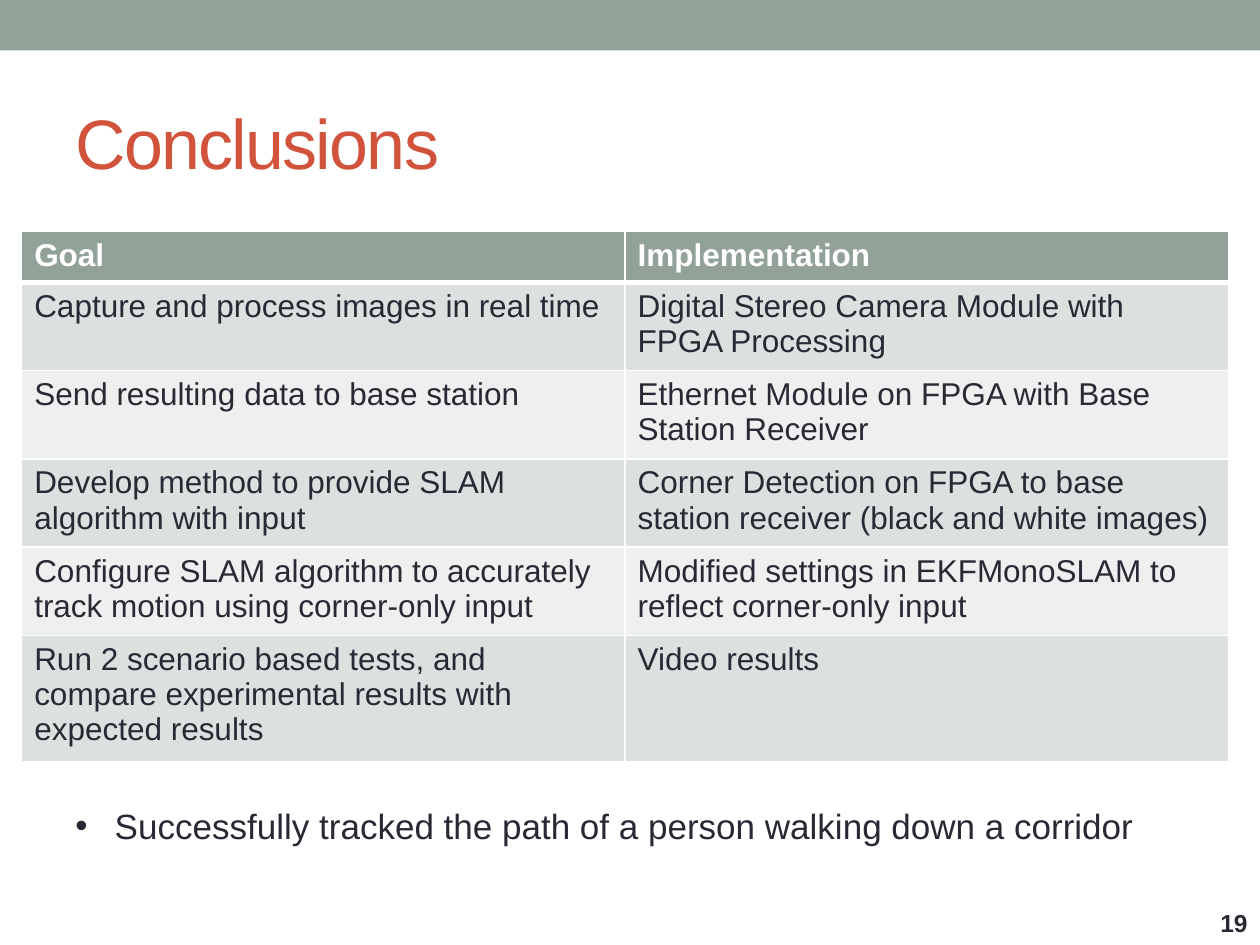
from dataclasses import dataclass

from lxml.etree import SubElement
from pptx import Presentation
from pptx.dml.color import RGBColor as RGB
from pptx.enum.shapes import MSO_SHAPE as SHAPE
from pptx.enum.text import MSO_ANCHOR as ANCHOR, MSO_AUTO_SIZE as FIT, PP_ALIGN as ALIGN
from pptx.oxml import parse_xml
from pptx.oxml.ns import nsdecls, qn
from pptx.util import Pt


@dataclass(frozen=True)
class Theme:
    font: str = "Arial"
    sage: str = "93A299"
    accent: str = "D2533C"
    ink: str = "292934"
    white: str = "FFFFFF"
    bands: tuple = ("DCE0DE", "EEF0EF")
    title: int = 40
    bullet: int = 20
    cell: int = 18
    number: int = 14


T = Theme()
ROWS = [
    ("Goal", "Implementation"),
    ("Capture and process images in real time",
     "Digital Stereo Camera Module with FPGA Processing"),
    ("Send resulting data to base station",
     "Ethernet Module on FPGA with Base Station Receiver"),
    ("Develop method to provide SLAM algorithm with input",
     "Corner Detection on FPGA to base station receiver (black and white images)"),
    ("Configure SLAM algorithm to accurately track motion using corner-only input",
     "Modified settings in EKFMonoSLAM to reflect corner-only input"),
    ("Run 2 scenario based tests, and compare experimental results with expected results",
     "Video results"),
]


def write(p, text, size, color, bold=False):
    r = p.add_run()
    r.text = text
    for name, value in dict(name=T.font, size=Pt(size), bold=bold).items():
        setattr(r.font, name, value)
    r.font.color.rgb = RGB.from_string(color)
    return r


def text_frame(s, box, **fmt):
    tf = s.shapes.add_textbox(*map(Pt, box)).text_frame
    for name, value in {"word_wrap": True, **fmt}.items():
        setattr(tf, name, value)
    return tf


def add_band(s, box):
    sp = s.shapes.add_shape(SHAPE.RECTANGLE, *map(Pt, box))
    sp.shadow.inherit = False
    sp.fill.solid()
    sp.fill.fore_color.rgb = RGB.from_string(T.sage)
    sp.line.fill.background()


def add_title(s, box, text):
    tf = text_frame(s, box, vertical_anchor=ANCHOR.MIDDLE)
    r = write(tf.paragraphs[0], text, T.title, T.accent)
    r._r.get_or_add_rPr().set("spc", "-100")


def set_borders(cell, bottom):
    tcPr = cell._tc.get_or_add_tcPr()
    widths = dict(lnL=1, lnR=1, lnT=1, lnB=bottom)
    for i, (tag, width) in enumerate(widths.items()):
        tcPr.insert(i, parse_xml(
            f'<a:{tag} {nsdecls("a")} w="{Pt(width)}"><a:solidFill>'
            f'<a:srgbClr val="{T.white}"/></a:solidFill></a:{tag}>'))


def add_goal_table(s, box, rows):
    table = s.shapes.add_table(len(rows), len(rows[0]), *map(Pt, box)).table
    table.horz_banding = False
    for i, row in enumerate(rows):
        header = i == 0
        fill = T.sage if header else T.bands[(i - 1) % 2]
        for j, text in enumerate(row):
            cell = table.cell(i, j)
            cell.fill.solid()
            cell.fill.fore_color.rgb = RGB.from_string(fill)
            set_borders(cell, 3 if header else 1)
            write(cell.text_frame.paragraphs[0], text, T.cell,
                  T.white if header else T.ink, header)


def add_bullet(s, box, text, indent):
    tf = text_frame(s, box, word_wrap=False, auto_size=FIT.SHAPE_TO_FIT_TEXT)
    p = tf.paragraphs[0]
    pPr = p._p.get_or_add_pPr()
    pPr.set("marL", str(Pt(indent)))
    pPr.set("indent", str(-Pt(indent)))
    SubElement(pPr, qn("a:buFont"), typeface=T.font)
    SubElement(pPr, qn("a:buChar"), char="•")
    write(p, text, T.bullet, T.ink)


def add_number(s, box, text):
    p = text_frame(s, box, vertical_anchor=ANCHOR.MIDDLE).paragraphs[0]
    p.alignment = ALIGN.RIGHT
    write(p, text, T.number, T.ink, True)


def conclusions_slide(prs, box):
    s = prs.slides.add_slide(prs.slide_layouts[6])
    x, y, w, h = box
    margin = 36
    # Top band and title
    add_band(s, (x, y, w, 28.8))
    add_title(s, (x + margin, y + 42, w - 2 * margin, 78), "Conclusions")
    # Goals against implementation; rows grow with their text
    add_goal_table(s, (x + 12.4, y + 132.2, 689.6, 29.2 * len(ROWS)), ROWS)
    # Slide number and closing point
    add_number(s, (x + w - 84, y + h - 26, 84, 26), "19")
    add_bullet(s, (x + margin, y + 456, 623.5, 31.5),
               "Successfully tracked the path of a person walking down a corridor", 22.5)


def main():
    prs = Presentation()
    prs.slide_width, prs.slide_height = Pt(720), Pt(540)
    conclusions_slide(prs, (0, 0, 720, 540))
    prs.save("out.pptx")


if __name__ == "__main__":
    main()
